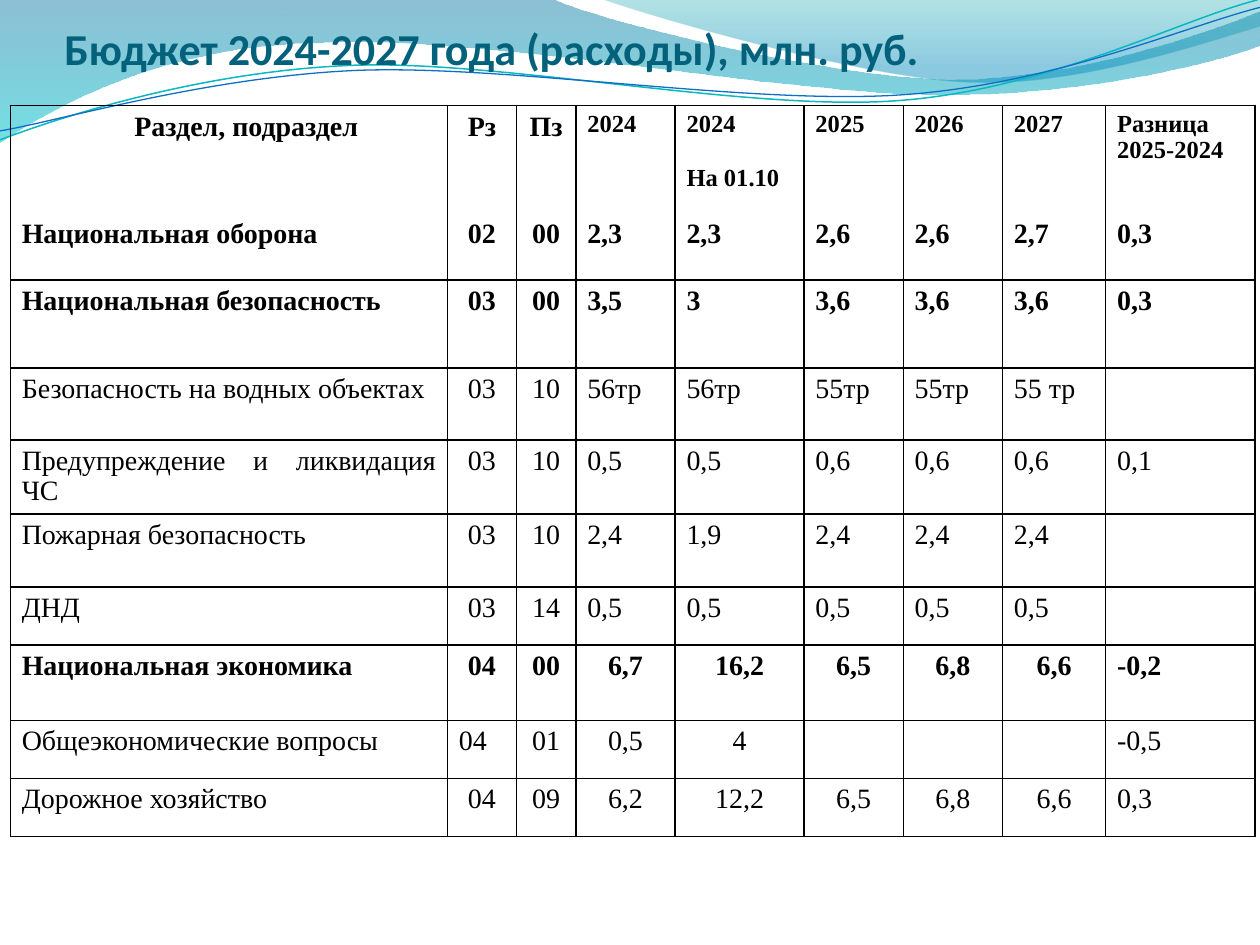
from lxml.etree import SubElement
from pptx import Presentation
from pptx.dml.color import RGBColor
from pptx.enum.text import MSO_ANCHOR, PP_ALIGN
from pptx.oxml import parse_xml
from pptx.oxml.ns import nsdecls, qn
from pptx.util import Cm, Pt

# Wave outlines in cm: two numbers are a line end, six are a Bezier segment.
LOWER_WAVE = [(0, 0), (11.18, 0),
              (12.09, 0.43, 16.87, 1.6, 19.25, 1.6),
              (21.67, 1.6, 24.33, 0.66, 25.4, 0.23), (25.4, 0.91),
              (24.97, 1.12, 22.1, 1.93, 18.95, 1.91),
              (15.8, 1.91, 9.7, 0.71, 6.53, 0.86),
              (3.28, 0.91, 1.17, 2.11, 0, 2.87)]
UPPER_WAVE = [(12.17, 0), (12.93, 0.28, 17.32, 1.57, 19.53, 1.65),
              (21.74, 1.75, 24.41, 0.81, 25.4, 0.53), (25.4, 0)]
TEAL_LINE = [(0, 2.82), (1.22, 2.36, 4.01, 1.45, 7.04, 1.32),
             (10.03, 1.19, 15.06, 2.26, 18.11, 2.03),
             (21.16, 1.8, 23.83, 0.38, 25.35, 0)]
BLUE_LINE = [(0, 2.64), (1.19, 2.44, 4.17, 1.55, 7.19, 1.42),
             (10.24, 1.3, 15.16, 2.13, 18.21, 1.91),
             (21.23, 1.7, 23.9, 0.53, 25.4, 0.15)]

COL_WIDTHS = [8.81, 1.39, 1.2, 2.0, 2.6, 2.0, 2.0, 2.08, 3.01]
ROW_HEIGHTS = [2.16, 1.35, 1.78, 1.45, 1.49, 1.47, 1.17, 1.52, 1.17, 1.17]
ROWS = [
    ["Раздел, подраздел", "Рз", "Пз", "2024", "2024\nНа 01.10", "2025", "2026",
     "2027", "Разница 2025-2024"],
    ["Национальная оборона", "02", "00", "2,3", "2,3", "2,6", "2,6", "2,7", "0,3"],
    ["Национальная безопасность", "03", "00", "3,5", "3", "3,6", "3,6", "3,6", "0,3"],
    ["Безопасность на водных объектах", "03", "10", "56тр", "56тр", "55тр", "55тр",
     "55 тр", ""],
    ["Предупреждение и ликвидация ЧС", "03", "10", "0,5", "0,5", "0,6", "0,6", "0,6",
     "0,1"],
    ["Пожарная безопасность", "03", "10", "2,4", "1,9", "2,4", "2,4", "2,4", ""],
    ["ДНД", "03", "14", "0,5", "0,5", "0,5", "0,5", "0,5", ""],
    ["Национальная экономика", "04", "00", "6,7", "16,2", "6,5", "6,8", "6,6", "-0,2"],
    ["Общеэкономические вопросы", "04", "01", "0,5", "4", "", "", "", "-0,5"],
    ["Дорожное хозяйство", "04", "09", "6,2", "12,2", "6,5", "6,8", "6,6", "0,3"],
]
BOLD_ROWS = {0, 1, 2, 7}
ECONOMY_ROW, GENERAL_ROW, LAST_COL = 7, 8, 8


def rgb(color):
    return RGBColor.from_string(color)


def write(tf, text, size, color="000000", font="Times New Roman", bold=False,
          align=PP_ALIGN.LEFT, gap=0, spacing=1.0):
    """Write one paragraph per line of text, with gap points between them."""
    for i, line in enumerate(text.split("\n")):
        p = tf.add_paragraph() if i else tf.paragraphs[0]
        p.alignment = align
        p.line_spacing = spacing
        p.space_before = Pt(gap if i else 0)
        r = p.add_run()
        r.text = line
        r.font.name, r.font.size, r.font.bold = font, Pt(size), bold
        r.font.color.rgb = rgb(color)


def add_curve(s, left, top, segments, close):
    """Build the outline from its corner points, then bend the Bezier segments."""
    ends = [(Cm(seg[-2]), Cm(seg[-1])) for seg in segments]
    builder = s.shapes.build_freeform(*ends[0])
    builder.add_line_segments(ends[1:], close=close)
    sp = builder.convert_to_shape(left, top)
    sp.shadow.inherit = False
    x0, y0 = (min(values) for values in zip(*ends))
    for line, seg in zip(list(sp.element.iter(qn("a:lnTo"))), segments[1:]):
        if len(seg) == 6:
            bezier = parse_xml(f'<a:cubicBezTo {nsdecls("a")}/>')
            for x, y in zip(seg[::2], seg[1::2]):
                SubElement(bezier, qn("a:pt"), x=str(Cm(x) - x0), y=str(Cm(y) - y0))
            line.getparent().replace(line, bezier)
    return sp


def add_wave(s, left, top, segments, stops):
    """Add a closed wave; stops are (position, colour, opacity percent)."""
    sp = add_curve(s, left, top, segments, True)
    sp.line.fill.background()
    sp.fill.gradient()
    sp.fill.gradient_angle = 270
    for stop, (position, color, _) in zip(sp.fill.gradient_stops, stops):
        stop.position = position
        stop.color.rgb = rgb(color)
    for clr, (_, _, opacity) in zip(sp.element.spPr.iter(qn("a:srgbClr")), stops):
        SubElement(clr, qn("a:alpha"), val=str(opacity * 1000))


def add_wave_line(s, left, top, segments, color, width):
    sp = add_curve(s, left, top, segments, False)
    sp.fill.background()
    sp.line.color.rgb = rgb(color)
    sp.line.width = Pt(width)


def add_waves(s, left, top):
    add_wave(s, left, top, LOWER_WAVE, [(0, "0074A1", 45), (1, "00C6CF", 55)])
    add_wave(s, left, top, UPPER_WAVE, [(0, "00A1A9", 30), (0.8, "008BBF", 45)])
    add_wave_line(s, left, top, TEAL_LINE, "0AB8BF", 0.85)
    add_wave_line(s, left, top, BLUE_LINE, "0F6FC6", 0.75)


def add_title(s, left, top, width, height):
    tf = s.shapes.add_textbox(left, top, width, height).text_frame
    tf.word_wrap = True
    tf.vertical_anchor = MSO_ANCHOR.BOTTOM
    tf.margin_left = tf.margin_right = tf.margin_bottom = 0
    write(tf, "Бюджет 2024-2027 года (расходы), млн. руб.", 25.2,
          color="04617B", font="Calibri", bold=True)


def set_borders(cell, hidden=""):
    """Draw black borders, except on the side (L, R, T or B) named as hidden."""
    tcPr = cell._tc.get_or_add_tcPr()
    for i, side in enumerate("LRTB"):
        fill = ("<a:noFill/>" if side == hidden else
                '<a:solidFill><a:srgbClr val="000000"/></a:solidFill>')
        tcPr.insert(i, parse_xml(
            f'<a:ln{side} w="12700" {nsdecls("a")}>{fill}</a:ln{side}>'))


def cell_align(row, col):
    if col == 0:
        return PP_ALIGN.JUSTIFY if row else PP_ALIGN.CENTER
    if col == LAST_COL or (row, col) == (GENERAL_ROW, 1):
        return PP_ALIGN.LEFT
    return PP_ALIGN.CENTER if col < 3 or row >= ECONOMY_ROW else PP_ALIGN.LEFT


def add_budget_table(s, left, top):
    table = s.shapes.add_table(len(ROWS), len(COL_WIDTHS), left, top,
                               Cm(sum(COL_WIDTHS)), Cm(sum(ROW_HEIGHTS))).table
    table.first_row = table.horz_banding = False
    for column, width in zip(table.columns, COL_WIDTHS):
        column.width = Cm(width)
    for i, (height, texts) in enumerate(zip(ROW_HEIGHTS, ROWS)):
        table.rows[i].height = Cm(height)
        for j, text in enumerate(texts):
            cell = table.cell(i, j)
            cell.fill.background()
            set_borders(cell, {0: "B", 1: "T"}.get(i, ""))
            cell.margin_left = cell.margin_right = Cm(0.23)
            cell.margin_top, cell.margin_bottom = Cm(0.13), Cm(0.02)
            if text:
                write(cell.text_frame, text, 14 if i == 0 and j > 2 else 16,
                      bold=i in BOLD_ROWS, align=cell_align(i, j), gap=15.5,
                      spacing=0.96)
    table.cell(0, 0).margin_left = Cm(0.93)


def main():
    prs = Presentation()
    prs.slide_width, prs.slide_height = Cm(25.4), Cm(19.05)
    s = prs.slides.add_slide(prs.slide_layouts[6])
    add_waves(s, 0, 0)
    add_title(s, Cm(1.3), Cm(0.33), Cm(22.86), Cm(1.17))
    add_budget_table(s, Cm(0.21), Cm(2.13))
    prs.save("out.pptx")


if __name__ == "__main__":
    main()
